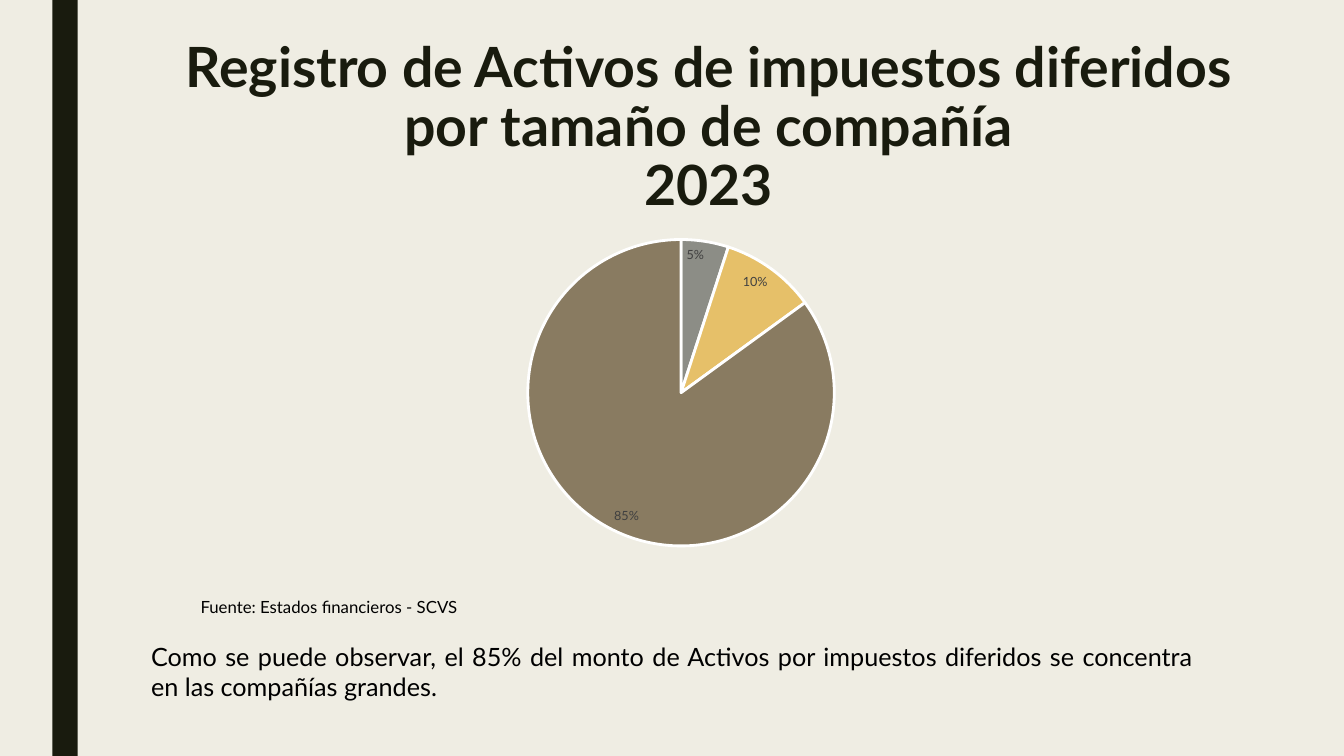
from lxml import etree
from pptx import Presentation
from pptx.chart.data import CategoryChartData
from pptx.dml.color import RGBColor
from pptx.enum.chart import XL_CHART_TYPE as ChartType, XL_LABEL_POSITION as LabelPosition
from pptx.enum.shapes import MSO_SHAPE as Shape
from pptx.enum.text import MSO_ANCHOR as Anchor, PP_ALIGN as Align
from pptx.oxml.ns import qn
from pptx.util import Inches, Pt

CREAM = RGBColor(0xEF, 0xED, 0xE3)
DARK = RGBColor(0x19, 0x1B, 0x0E)
BLACK = RGBColor(0x00, 0x00, 0x00)
WHITE = RGBColor(0xFF, 0xFF, 0xFF)
LABEL_GRAY = RGBColor(0x40, 0x40, 0x40)
SLICES = {
    "PEQUEÑAS": (0.05, RGBColor(0x8C, 0x8D, 0x86)),
    "MEDIANAS": (0.1, RGBColor(0xE6, 0xC0, 0x69)),
    "GRANDES": (0.85, RGBColor(0x89, 0x7B, 0x61)),
}
FONT = "Lato"


def set_font(font, size, color, bold=False):
    for name, value in {"name": FONT, "size": Pt(size), "bold": bold}.items():
        setattr(font, name, value)
    font.color.rgb = color


def add_text(page, place, text, size, color, align, bold=False, spacing=None):
    box = page.shapes.add_textbox(*map(Inches, place))
    box.text_frame.word_wrap = True
    box.text_frame.vertical_anchor = Anchor.TOP
    para = box.text_frame.paragraphs[0]
    para.text = text
    for name, value in {"alignment": align, "line_spacing": spacing}.items():
        setattr(para, name, value)
    for span in para.runs:
        set_font(span.font, size, color, bold)


deck = Presentation()
deck.slide_width, deck.slide_height = Inches(13.33), Inches(7.5)
page = deck.slides.add_slide(deck.slide_layouts[6])
page.background.fill.solid()
page.background.fill.fore_color.rgb = CREAM

stripe = page.shapes.add_shape(Shape.RECTANGLE, Inches(0.52), 0, Inches(0.25), Inches(7.5))
stripe.shadow.inherit = False
stripe.fill.solid()
stripe.fill.fore_color.rgb = DARK
stripe.line.fill.background()

add_text(page, (1.43, 0.35, 11.2, 1.44),
         "Registro de Activos de impuestos diferidos por tamaño de compañía\v2023",
         39.6, DARK, Align.CENTER, bold=True, spacing=0.89)

data = CategoryChartData(number_format="0%")
data.categories = list(SLICES)
data.add_series("Series 1", [value for value, color in SLICES.values()])
chart = page.shapes.add_chart(ChartType.PIE, Inches(3.3), Inches(2.02),
                              Inches(6.91), Inches(3.91), data).chart
chart.has_title = False
chart.has_legend = False
set_font(chart.font, 10, BLACK)

pie = chart.plots[0]
pie.vary_by_categories = True
for index, (value, color) in enumerate(SLICES.values()):
    slice_format = pie.series[0].points[index].format
    slice_format.fill.solid()
    slice_format.fill.fore_color.rgb = color
    slice_format.line.color.rgb = WHITE
    slice_format.line.width = Pt(2)

labels = pie.series[0].data_labels
label_format = {
    "show_value": True,
    "number_format": "0%",
    "number_format_is_linked": False,
    "position": LabelPosition.INSIDE_END,
}
for name, value in label_format.items():
    setattr(labels, name, value)
set_font(labels.font, 9, LABEL_GRAY)

plot_area = chart.element.find(".//" + qn("c:plotArea"))
layout = plot_area.find(qn("c:layout"))
if layout is None:
    layout = etree.Element(qn("c:layout"))
    plot_area.insert(0, layout)
manual = etree.SubElement(layout, qn("c:manualLayout"))
pie_frame = {"layoutTarget": "inner", "xMode": "edge", "yMode": "edge",
             "x": 0.28, "y": 0.09, "w": 0.44, "h": 0.78}
for name, value in pie_frame.items():
    etree.SubElement(manual, qn("c:" + name)).set("val", str(value))

add_text(page, (1.89, 5.87, 6.25, 0.3), "Fuente: Estados financieros - SCVS",
         12, BLACK, Align.LEFT)
add_text(page, (1.4, 6.31, 10.53, 0.71),
         "Como se puede observar, el 85% del monto de Activos por impuestos diferidos "
         "se concentra en las compañías grandes.",
         18, BLACK, Align.JUSTIFY)

deck.save("out.pptx")
